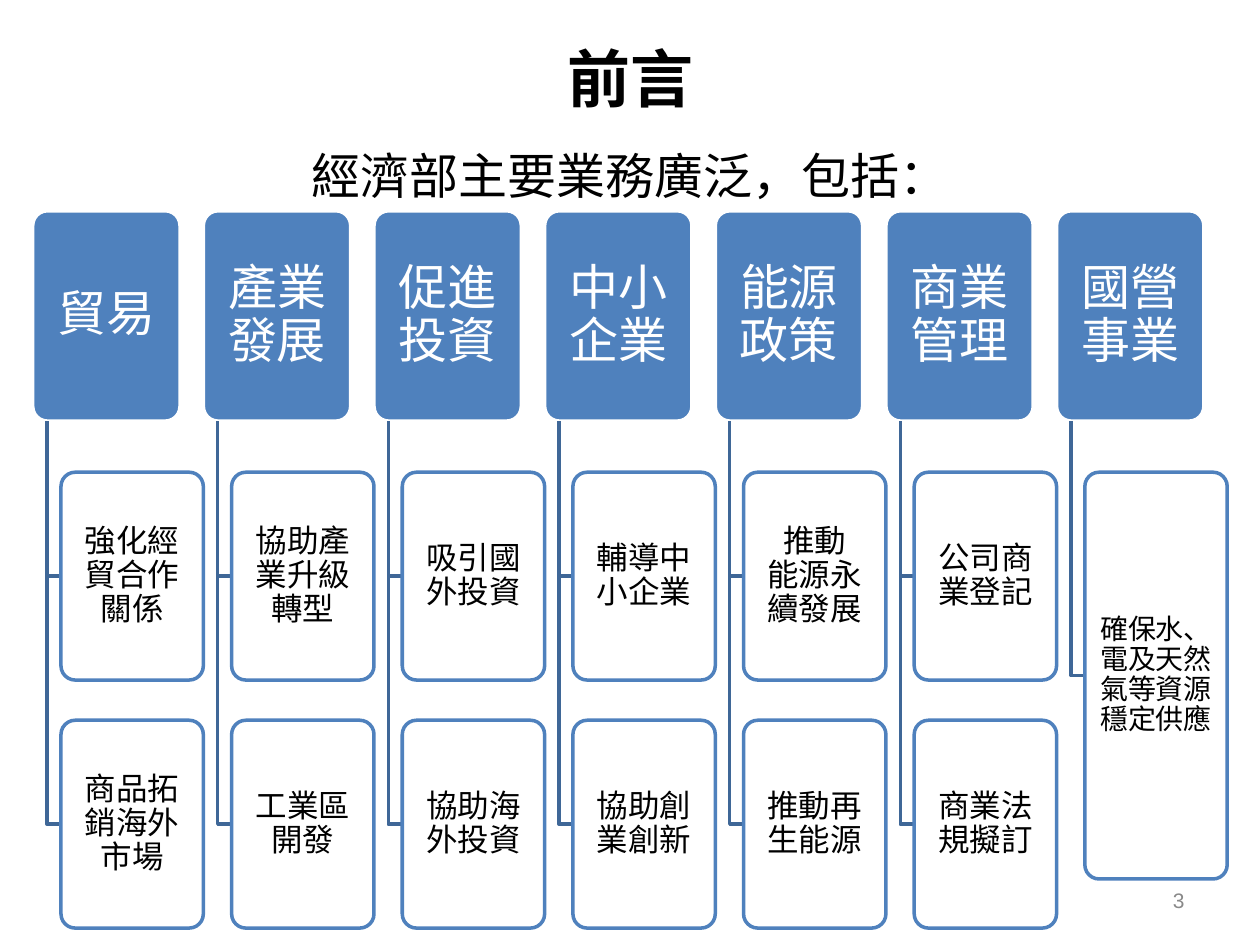
from lxml import etree
from pptx import Presentation
from pptx import util as u
from pptx.dml.color import RGBColor
from pptx.enum import shapes, text
from pptx.oxml.ns import qn

COLORS = {
    "header": "4F81BD",
    "branch": "3F6797",
    "white": "FFFFFF",
    "black": "000000",
    "number": "898989",
}
CJK = "Noto Sans CJK SC"

DUTIES = [
    ("貿易", ["強化經貿合作關係", "商品拓銷海外市場"]),
    ("產業發展", ["協助產業升級轉型", "工業區開發"]),
    ("促進投資", ["吸引國外投資", "協助海外投資"]),
    ("中小企業", ["輔導中小企業", "協助創業創新"]),
    ("能源政策", ["推動\v能源永續發展", "推動再生能源"]),
    ("商業管理", ["公司商業登記", "商業法規擬訂"]),
    ("國營\v事業", ["確保水、電及天然氣等資源穩定供應"]),
]

# Chart geometry in centimetres
LEFT, PITCH = 0.66, 3.44
HEADER_TOP, HEADER_WIDTH, HEADER_HEIGHT = 4.25, 2.97, 4.24
TASK_TOP, TASK_PITCH, TASK_WIDTH, TASK_HEIGHT = 9.52, 5, 2.87, 4.19
TALL_HEIGHT = 8.2
STEM_INDENT, TASK_INDENT = 0.29, 0.57


def rgb(name):
    return RGBColor.from_string(COLORS[name])


def write(frame, content, size, color="black", font=CJK, bold=False,
          align=text.PP_ALIGN.CENTER, anchor=text.MSO_ANCHOR.MIDDLE,
          spacing=None, insets=(0.25, 0.13)):
    """Fill a text frame with one formatted paragraph; insets are in cm."""
    frame.word_wrap = True
    frame.auto_size = text.MSO_AUTO_SIZE.NONE
    frame.vertical_anchor = anchor
    frame.margin_left = frame.margin_right = u.Cm(insets[0])
    frame.margin_top = frame.margin_bottom = u.Cm(insets[1])
    paragraph = frame.paragraphs[0]
    paragraph.text = content
    paragraph.alignment = align
    paragraph.space_before = u.Pt(0)
    if spacing:
        paragraph.line_spacing = spacing
    for run in paragraph.runs:
        run.font.size = u.Pt(size)
        run.font.bold = bold
        run.font.color.rgb = rgb(color)
        run.font.name = font
        latin = run.font._element.find(qn("a:latin"))
        east_asian = etree.Element(qn("a:ea"), typeface=font)
        latin.addnext(east_asian)


class SlideBuilder:
    def __init__(self, slide, line_width=2, corner=0.1):
        self.slide = slide
        self.line_width = u.Pt(line_width)
        self.corner = corner

    def place(self, shape, left, top, width, height):
        shape.left, shape.top = u.Cm(left), u.Cm(top)
        shape.width, shape.height = u.Cm(width), u.Cm(height)

    def title(self, content, *box):
        heading = self.slide.shapes.title
        self.place(heading, *box)
        write(heading.text_frame, content, 36, bold=True,
              anchor=text.MSO_ANCHOR.TOP)

    def lead(self, content, *box):
        body = self.slide.placeholders[1]
        self.place(body, *box)
        properties = body.text_frame.paragraphs[0]._p.get_or_add_pPr()
        properties.set("marL", "0")
        properties.set("indent", "0")
        etree.SubElement(properties, qn("a:buNone"))
        write(body.text_frame, content, 28, spacing=u.Pt(22),
              anchor=text.MSO_ANCHOR.TOP)

    def page_number(self, content, *box):
        number = self.slide.shapes.add_textbox(*map(u.Cm, box))
        write(number.text_frame, content, 12, "number", font="Arial",
              align=text.PP_ALIGN.RIGHT)

    def card(self, content, *box, fill, line, opacity=100, **style):
        card = self.slide.shapes.add_shape(
            shapes.MSO_SHAPE.ROUNDED_RECTANGLE, *map(u.Cm, box))
        card.adjustments[0] = self.corner
        card.shadow.inherit = False
        card.fill.solid()
        card.fill.fore_color.rgb = rgb(fill)
        if opacity < 100:
            color = card._element.spPr.find(qn("a:solidFill"))[0]
            etree.SubElement(color, qn("a:alpha"), val=str(opacity * 1000))
        card.line.color.rgb = rgb(line)
        card.line.width = self.line_width
        write(card.text_frame, content, spacing=0.9, **style)

    def branch(self, x, top, bottom, end):
        """Draw an elbow down from a header and right to a task."""
        x, top, bottom, end = map(u.Cm, (x, top, bottom, end))
        outline = self.slide.shapes.build_freeform(x, top)
        outline.add_line_segments([(x, bottom), (end, bottom)], close=False)
        elbow = outline.convert_to_shape()
        elbow.shadow.inherit = False
        elbow.fill.background()
        elbow.line.color.rgb = rgb("branch")
        elbow.line.width = self.line_width

    def duty(self, left, name, tasks):
        """Draw one column: a header with its tasks hanging below."""
        self.card(name, left, HEADER_TOP, HEADER_WIDTH, HEADER_HEIGHT,
                  fill="header", line="white", size=28, color="white",
                  insets=(0.15, 0.1))
        single = len(tasks) == 1
        height = TALL_HEIGHT if single else TASK_HEIGHT
        task_left = left + TASK_INDENT
        for row, task in enumerate(tasks):
            top = TASK_TOP + row * TASK_PITCH
            self.branch(left + STEM_INDENT, HEADER_TOP + HEADER_HEIGHT,
                        top + height / 2, task_left)
            self.card(task, task_left, top, TASK_WIDTH, height,
                      fill="white", line="header", opacity=90,
                      size=16 if single else 18,
                      insets=(0.08, 0.05) if single else (0.1, 0.08))


def main():
    deck = Presentation()
    deck.slide_width, deck.slide_height = u.Cm(25.4), u.Cm(19.05)
    builder = SlideBuilder(deck.slides.add_slide(deck.slide_layouts[1]))
    builder.title("前言", 0, 0.66, 25.4, 1.8)
    builder.lead("經濟部主要業務廣泛，包括：", 5.9, 3.22, 13.6, 1.05)
    builder.page_number("3", 18.2, 17.65, 5.93, 1.01)
    for column, (name, tasks) in enumerate(DUTIES):
        builder.duty(LEFT + column * PITCH, name, tasks)
    deck.save("out.pptx")


if __name__ == "__main__":
    main()
